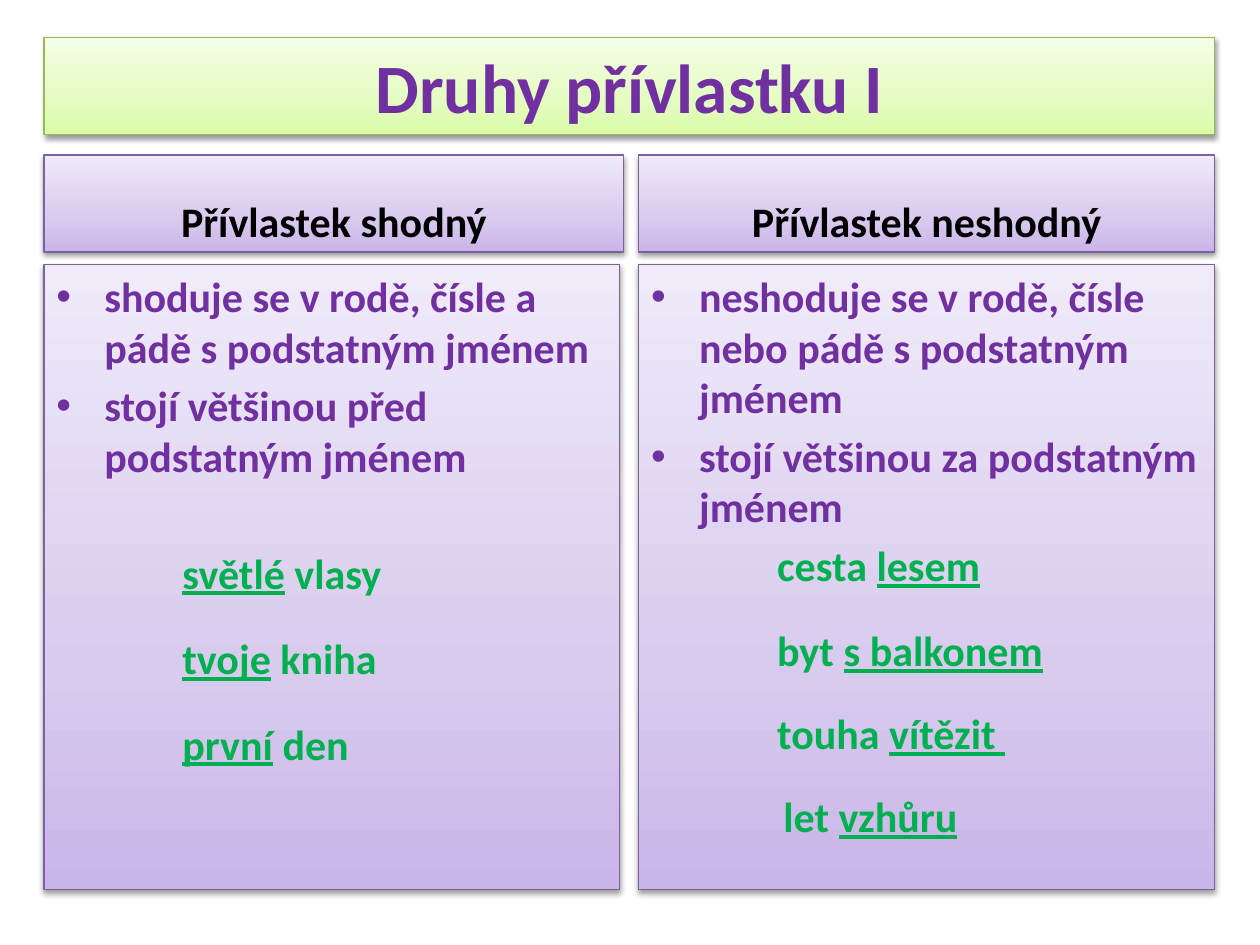
from copy import deepcopy

from lxml.etree import SubElement
from pptx import Presentation
from pptx.dml.color import RGBColor
from pptx.enum.shapes import MSO_SHAPE as Shape
from pptx.enum.text import MSO_ANCHOR as Anchor, PP_ALIGN as Align
from pptx.oxml.ns import qn
from pptx.util import Inches, Pt

BLACK = RGBColor(0x00, 0x00, 0x00)
PURPLE = RGBColor(0x70, 0x30, 0xA0)
GREEN = RGBColor(0x00, 0xB0, 0x50)
LIME_EDGE = RGBColor(0x98, 0xB9, 0x55)
LILAC_EDGE = RGBColor(0x7D, 0x60, 0xA0)
LIME = [RGBColor(0xDA, 0xFD, 0xA7), RGBColor(0xE4, 0xFC, 0xC2), RGBColor(0xF5, 0xFF, 0xE7)]
LILAC = [RGBColor(0xC9, 0xB5, 0xE8), RGBColor(0xD8, 0xCB, 0xEE), RGBColor(0xF0, 0xEA, 0xF9)]
STOPS = (0, 0.35, 1)

TITLE = "Druhy přívlastku I"
COLUMNS = [
    {
        "heading": "Přívlastek shodný",
        "heading_width": 4.6,
        "rules": [
            "shoduje se v rodě, čísle a pádě s podstatným jménem",
            "stojí většinou před podstatným jménem",
        ],
        "examples": [
            (38, 1, [("světlé", True), (" vlasy", False)]),
            (20, 1, [("tvoje", True), (" kniha", False)]),
            (20, 1, [("první", True), (" den", False)]),
        ],
    },
    {
        "heading": "Přívlastek neshodný",
        "heading_width": 4.57,
        "rules": [
            "neshoduje se v rodě, čísle nebo pádě s podstatným jménem",
            "stojí většinou za podstatným jménem",
        ],
        "examples": [
            (4.8, 1, [("cesta ", False), ("lesem", True)]),
            (20, 1, [("byt ", False), ("s balkonem", True)]),
            (18.5, 1, [("touha ", False), ("vítězit ", True)]),
            (18.5, 1.05, [("let ", False), ("vzhůru", True)]),
        ],
    },
]

LEFT, RIGHT = 0.35, 9.64
COLUMN_WIDTH = 4.57
COLUMN_STEP = RIGHT - LEFT - COLUMN_WIDTH
BAND_HEIGHT = 0.77
TITLE_TOP, HEADING_TOP, BODY_TOP = 0.3, 1.23, 2.1
BODY_HEIGHT = 4.96
TEXT_SIZE = 24
SPACING = 0.2 * TEXT_SIZE
HANGING = 0.38


def add_shadow(panel):
    effects = SubElement(panel._element.spPr, qn("a:effectLst"))
    shadow = SubElement(effects, qn("a:outerShdw"), blurRad=str(Pt(3.1)),
                        dist=str(Pt(1.6)), dir="5400000", rotWithShape="0")
    tone = SubElement(shadow, qn("a:srgbClr"), val=str(BLACK))
    SubElement(tone, qn("a:alpha"), val="38000")


def add_panel(slide, left, top, width, height, colors, edge, anchor):
    panel = slide.shapes.add_shape(
        Shape.RECTANGLE, Inches(left), Inches(top), Inches(width), Inches(height))
    panel.fill.gradient()
    panel.fill.gradient_angle = 90
    stop_list = panel.fill._fill._gradFill.find(qn("a:gsLst"))
    stop_list.append(deepcopy(stop_list[0]))
    for stop, color, position in zip(panel.fill.gradient_stops, colors, STOPS):
        stop.color.rgb = color
        stop.position = position
    panel.line.color.rgb = edge
    panel.line.width = Pt(0.75)
    add_shadow(panel)
    panel.text_frame.word_wrap = True
    panel.text_frame.vertical_anchor = anchor
    return panel.text_frame


def add_run(paragraph, text, color, size=TEXT_SIZE, underline=False):
    run = paragraph.add_run()
    run.text = text
    run.font.name = "Calibri"
    run.font.size = Pt(size)
    run.font.bold = True
    run.font.color.rgb = color
    if underline:
        run.font.underline = True


def format_paragraph(paragraph, align, before=0, margin=0, bullet=False):
    paragraph.alignment = align
    paragraph.space_before = Pt(before)
    properties = paragraph._p.get_or_add_pPr()
    properties.set("marL", str(Inches(margin)))
    if bullet:
        properties.set("indent", str(-Inches(margin)))
        SubElement(properties, qn("a:buFont"), typeface="Arial")
        SubElement(properties, qn("a:buChar"), char="•")


def add_body(text_frame, column):
    paragraph = text_frame.paragraphs[0]
    for index, rule in enumerate(column["rules"]):
        if index:
            paragraph = text_frame.add_paragraph()
        format_paragraph(paragraph, Align.LEFT, SPACING, HANGING, bullet=True)
        add_run(paragraph, rule, PURPLE)
    for before, margin, words in column["examples"]:
        paragraph = text_frame.add_paragraph()
        format_paragraph(paragraph, Align.LEFT, before, margin)
        for text, underline in words:
            add_run(paragraph, text, GREEN, underline=underline)


def main():
    deck = Presentation()
    deck.slide_width, deck.slide_height = Inches(10), Inches(7.5)
    slide = deck.slides.add_slide(deck.slide_layouts[6])

    title = add_panel(slide, LEFT, TITLE_TOP, RIGHT - LEFT, BAND_HEIGHT,
                      LIME, LIME_EDGE, Anchor.MIDDLE).paragraphs[0]
    format_paragraph(title, Align.CENTER)
    add_run(title, TITLE, PURPLE, size=39.6)

    for index, column in enumerate(COLUMNS):
        left = LEFT + index * COLUMN_STEP
        heading = add_panel(slide, left, HEADING_TOP, column["heading_width"], BAND_HEIGHT,
                            LILAC, LILAC_EDGE, Anchor.BOTTOM).paragraphs[0]
        format_paragraph(heading, Align.CENTER, SPACING)
        add_run(heading, column["heading"], BLACK)
        body = add_panel(slide, left, BODY_TOP, COLUMN_WIDTH, BODY_HEIGHT,
                         LILAC, LILAC_EDGE, Anchor.TOP)
        add_body(body, column)

    deck.save("out.pptx")


if __name__ == "__main__":
    main()
